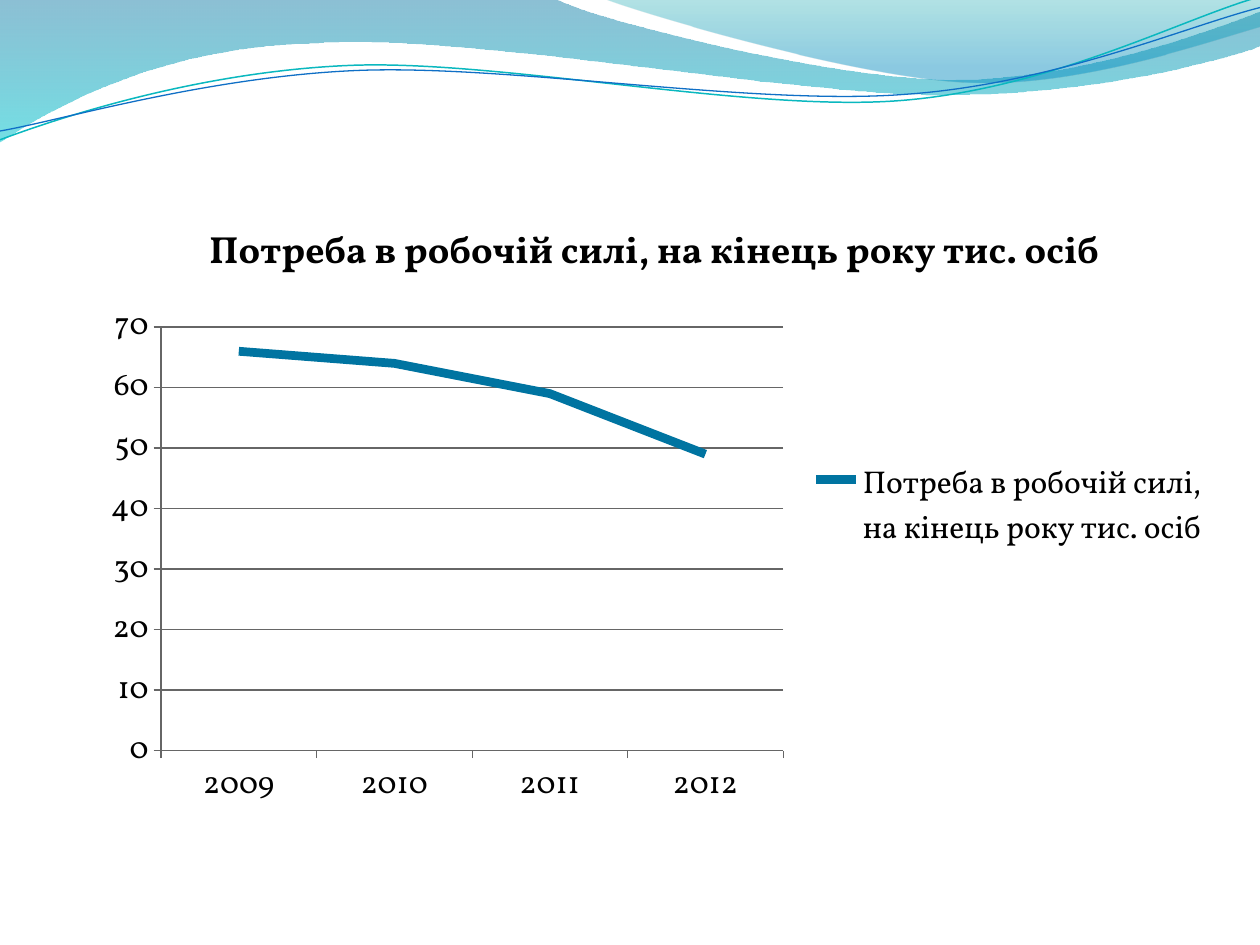
from lxml import etree
from pptx import Presentation
from pptx.chart.data import CategoryChartData
from pptx.dml.color import RGBColor
from pptx.enum.chart import XL_CHART_TYPE, XL_LEGEND_POSITION, XL_MARKER_STYLE, XL_TICK_MARK
from pptx.oxml.ns import qn
from pptx.util import Inches, Pt

COLORS = {
    "blue": "0074A1", "cyan": "00C6CF", "teal": "00A1A9", "sky": "008BBF",
    "teal line": "0AB8BF", "blue line": "0F6FC6",
    "text": "000000", "axis": "666666",
}
FONT = "Vollkorn"


def color(name):
    return RGBColor.from_string(COLORS[name])


def add_wave(shapes, start, segments, closed):
    """Draw a path; a segment is a line (x, y) or a Bezier (x1, y1, x2, y2, x, y)."""
    builder = shapes.build_freeform(Inches(start[0]), Inches(start[1]), scale=1.0)
    builder.add_line_segments(
        [(Inches(segment[-2]), Inches(segment[-1])) for segment in segments], close=closed)
    shape = builder.convert_to_shape()
    shape.shadow.inherit = False
    # Turn the straight segments that have control points into Bezier curves
    lines = list(shape._element.iter(qn("a:lnTo")))
    for line, segment in zip(lines, segments):
        if len(segment) == 6:
            curve = etree.Element(qn("a:cubicBezTo"))
            for x, y in zip(segment[::2], segment[1::2]):
                point = etree.SubElement(curve, qn("a:pt"))
                point.set("x", str(Inches(x) - shape.left))
                point.set("y", str(Inches(y) - shape.top))
            line.getparent().replace(line, curve)
    return shape


presentation = Presentation()
presentation.slide_width = Inches(10)
presentation.slide_height = Inches(7.5)
slide = presentation.slides.add_slide(presentation.slide_layouts[6])

# Gradient waves: start, segments, stops of (position, colour, opacity %)
filled_waves = [
    ((0, 0),
     [(4.4, -0.01), (4.76, 0.17, 6.64, 0.63, 7.58, 0.63),
      (8.53, 0.63, 9.58, 0.26, 10, 0.09), (10.01, 0.36),
      (9.83, 0.44, 8.7, 0.76, 7.46, 0.75), (6.22, 0.75, 3.82, 0.28, 2.57, 0.34),
      (1.29, 0.36, 0.46, 0.83, -0.01, 1.13)],
     [(0, "blue", 45), (1, "cyan", 55)]),
    ((4.79, -0.01),
     [(5.09, 0.11, 6.82, 0.62, 7.69, 0.65), (8.56, 0.69, 9.61, 0.32, 10, 0.21), (10, 0)],
     [(0, "teal", 30), (0.8, "sky", 45)]),
]
for start, segments, stops in filled_waves:
    wave = add_wave(slide.shapes, start, segments, closed=True)
    wave.line.fill.background()
    wave.fill.gradient()
    wave.fill.gradient_angle = 270
    for stop, (position, name, opacity) in zip(wave.fill.gradient_stops, stops):
        stop.position = position
        stop.color.rgb = color(name)
    for element, (position, name, opacity) in zip(wave._element.iter(qn("a:srgbClr")), stops):
        etree.SubElement(element, qn("a:alpha")).set("val", str(opacity * 1000))

# Thin wave lines
line_waves = [
    ((0, 1.11),
     [(0.48, 0.93, 1.58, 0.57, 2.77, 0.52), (3.95, 0.47, 5.93, 0.89, 7.13, 0.8),
      (8.33, 0.71, 9.38, 0.15, 9.98, -0.02)], "teal line", 0.85),
    ((0, 1.04),
     [(0.47, 0.96, 1.64, 0.61, 2.83, 0.56), (4.03, 0.51, 5.97, 0.84, 7.17, 0.75),
      (8.36, 0.67, 9.41, 0.21, 10, 0.06)], "blue line", 0.75),
]
for start, segments, name, width in line_waves:
    wave = add_wave(slide.shapes, start, segments, closed=False)
    wave.fill.background()
    wave.line.color.rgb = color(name)
    wave.line.width = Pt(width)

# Line chart
title = "Потреба в робочій силі, на кінець року тис. осіб"
data = CategoryChartData()
data.categories = ["2009", "2010", "2011", "2012"]
data.add_series(title, [66, 64, 59, 49])
chart = slide.shapes.add_chart(
    XL_CHART_TYPE.LINE, Inches(0.7), Inches(1.56), Inches(9), Inches(4.95), data).chart
chart.font.name = FONT
chart.font.size = Pt(18)
chart.font.color.rgb = color("text")

# Title and legend
chart.has_title = True
chart.chart_title.include_in_layout = False
chart.chart_title.text_frame.text = title
title_font = chart.chart_title.text_frame.paragraphs[0].font
title_font.name = FONT
title_font.size = Pt(21.6)
title_font.bold = True
title_font.color.rgb = color("text")
chart.has_legend = True
chart.legend.position = XL_LEGEND_POSITION.RIGHT
chart.legend.include_in_layout = False

# Series
plot = chart.plots[0]
plot.vary_by_categories = False
series = plot.series[0]
series.smooth = False
series.marker.style = XL_MARKER_STYLE.NONE
series.format.line.color.rgb = color("blue")
series.format.line.width = Pt(5)

# Axes
value_axis = chart.value_axis
value_axis.minimum_scale = 0
value_axis.maximum_scale = 70
value_axis.major_unit = 10
value_axis.has_major_gridlines = True
for axis in (chart.category_axis, value_axis):
    axis.major_tick_mark = XL_TICK_MARK.OUTSIDE
    axis.minor_tick_mark = XL_TICK_MARK.NONE
for part in (chart.category_axis, value_axis, value_axis.major_gridlines):
    part.format.line.color.rgb = color("axis")
    part.format.line.width = Pt(0.75)

presentation.save("out.pptx")
